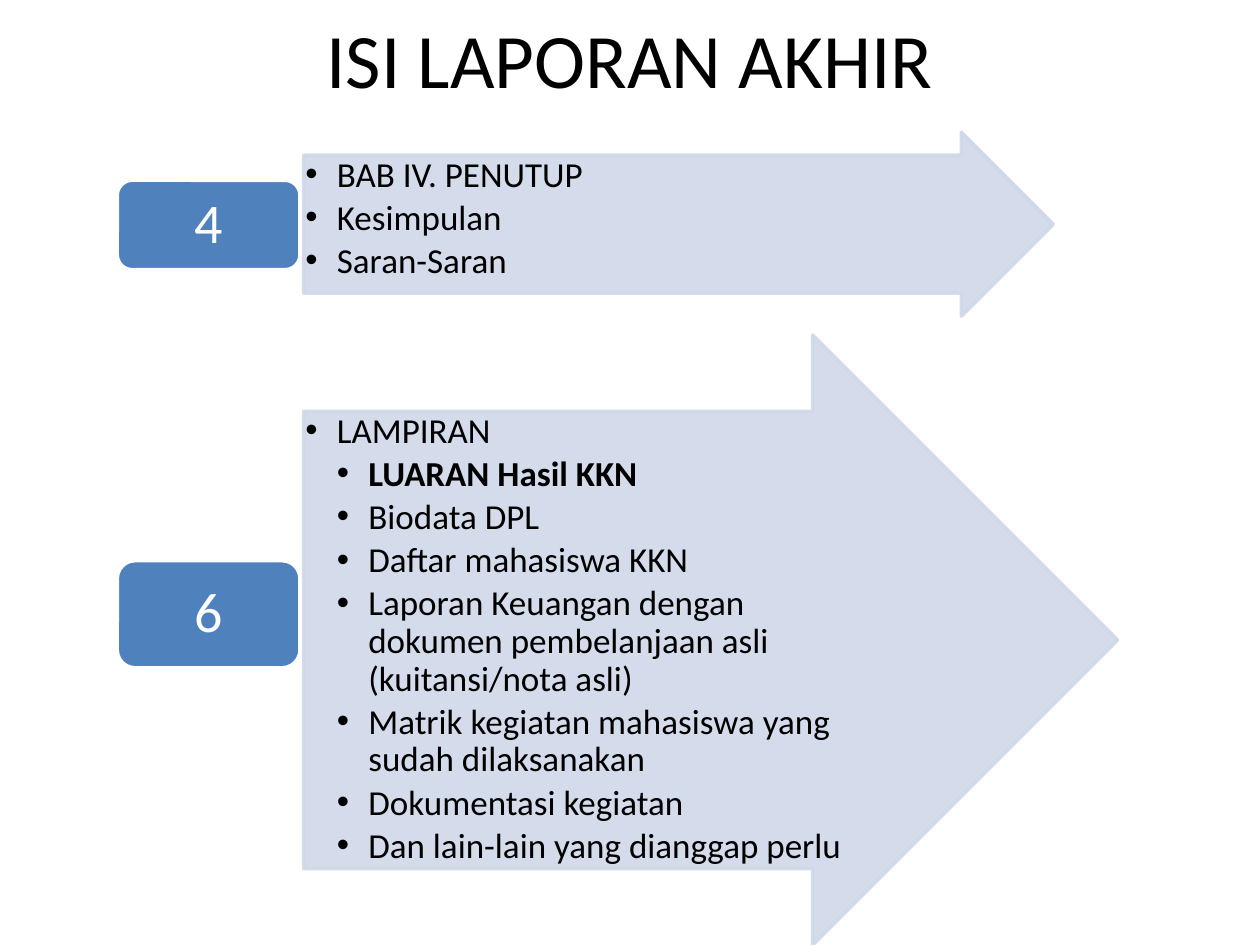
from lxml import etree
from pptx import Presentation
from pptx.dml.color import RGBColor
from pptx.enum.shapes import MSO_SHAPE
from pptx.enum.text import MSO_ANCHOR, PP_ALIGN
from pptx.oxml.ns import qn
from pptx.util import Pt

ARROW, ROUNDED = MSO_SHAPE.RIGHT_ARROW, MSO_SHAPE.ROUNDED_RECTANGLE
TOP, MIDDLE = MSO_ANCHOR.TOP, MSO_ANCHOR.MIDDLE
LEFT, CENTER = PP_ALIGN.LEFT, PP_ALIGN.CENTER

BADGE_LEFT, BADGE_WIDTH = 67, 104.4
ARROW_LEFT = 173.5
INDENT = 18

# badge: number, top, height; arrow: top, width, height; items: level, text, bold
SECTIONS = [
    (("4", 103, 51.1), (75.6, 428.4, 105.1), [
        (1, "BAB IV. PENUTUP", False),
        (1, "Kesimpulan", False),
        (1, "Saran-Saran", False),
    ]),
    (("6", 320.4, 61.2), (191.5, 465.1, 348.5), [
        (1, "LAMPIRAN", False),
        (2, "LUARAN Hasil KKN", True),
        (2, "Biodata DPL", False),
        (2, "Daftar mahasiswa KKN", False),
        (2, "Laporan Keuangan dengan dokumen pembelanjaan asli "
            "(kuitansi/nota asli)", False),
        (2, "Matrik kegiatan mahasiswa yang sudah dilaksanakan", False),
        (2, "Dokumentasi kegiatan", False),
        (2, "Dan lain-lain yang dianggap perlu", False),
    ]),
]


def rgb(value):
    return RGBColor.from_string(value)


def set_attrs(obj, values):
    for name, value in values.items():
        setattr(obj, name, value)


def set_alpha(sp, percent):
    """Make the fill and line colours of a shape partly transparent."""
    for color in sp._element.spPr.iter(qn("a:srgbClr")):
        etree.SubElement(color, qn("a:alpha"), val=str(percent * 1000))


def set_bullet(p, level):
    pPr = p._p.get_or_add_pPr()
    pPr.set("marL", str(Pt(INDENT * level)))
    pPr.set("indent", str(-Pt(INDENT)))
    etree.SubElement(pPr, qn("a:buFont"), typeface="Arial")
    etree.SubElement(pPr, qn("a:buChar"), char="•")


class SlideBuilder:
    font = "Calibri"
    black, white = "000000", "FFFFFF"
    badge_fill, arrow_fill = "4F81BD", "D0D8E8"

    def __init__(self, slide):
        self.s = slide

    def frame(self, sp, anchor, inset_x, inset_y):
        tf = sp.text_frame
        set_attrs(tf, {
            "word_wrap": True, "vertical_anchor": anchor,
            "margin_left": Pt(inset_x), "margin_right": Pt(inset_x),
            "margin_top": Pt(inset_y), "margin_bottom": Pt(inset_y),
        })
        return tf

    def add_text(self, p, text, size, color, bold=False, **layout):
        set_attrs(p, layout)
        r = p.add_run()
        r.text = text
        set_attrs(r.font, {"name": self.font, "size": Pt(size), "bold": bold})
        r.font.color.rgb = rgb(color)

    def shape(self, kind, box, fill, line):
        sp = self.s.shapes.add_shape(kind, *map(Pt, box))
        sp.shadow.inherit = False
        sp.fill.solid()
        sp.fill.fore_color.rgb = rgb(fill)
        sp.line.color.rgb = rgb(line)
        sp.line.width = Pt(2)
        return sp

    def title(self, text, box):
        sp = self.s.shapes.add_textbox(*map(Pt, box))
        tf = self.frame(sp, MIDDLE, 7.2, 3.6)
        self.add_text(tf.paragraphs[0], text, 44, self.black, alignment=CENTER)

    def arrow(self, box, items):
        sp = self.shape(ARROW, box, self.arrow_fill, self.arrow_fill)
        sp.adjustments[0], sp.adjustments[1] = 0.75, 0.5
        set_alpha(sp, 90)
        tf = self.frame(sp, TOP, 1, 1)
        for i, (level, text, bold) in enumerate(items):
            p = tf.add_paragraph() if i else tf.paragraphs[0]
            self.add_text(p, text, 20, self.black, bold, level=level,
                          alignment=LEFT, line_spacing=0.9, space_after=Pt(3))
            set_bullet(p, level)

    def badge(self, box, number):
        sp = self.shape(ROUNDED, box, self.badge_fill, self.white)
        tf = self.frame(sp, MIDDLE, 9.6, 4.8)
        self.add_text(tf.paragraphs[0], number, 32, self.white,
                      alignment=CENTER, line_spacing=0.9)


def main():
    prs = Presentation()
    prs.slide_width, prs.slide_height = Pt(720), Pt(540)
    builder = SlideBuilder(prs.slides.add_slide(prs.slide_layouts[6]))
    builder.title("ISI LAPORAN AKHIR", (36, -12, 648, 90))
    for (number, top, height), (arrow_top, width, arrow_height), items in SECTIONS:
        builder.arrow((ARROW_LEFT, arrow_top, width, arrow_height), items)
        builder.badge((BADGE_LEFT, top, BADGE_WIDTH, height), number)
    prs.save("out.pptx")


if __name__ == "__main__":
    main()
